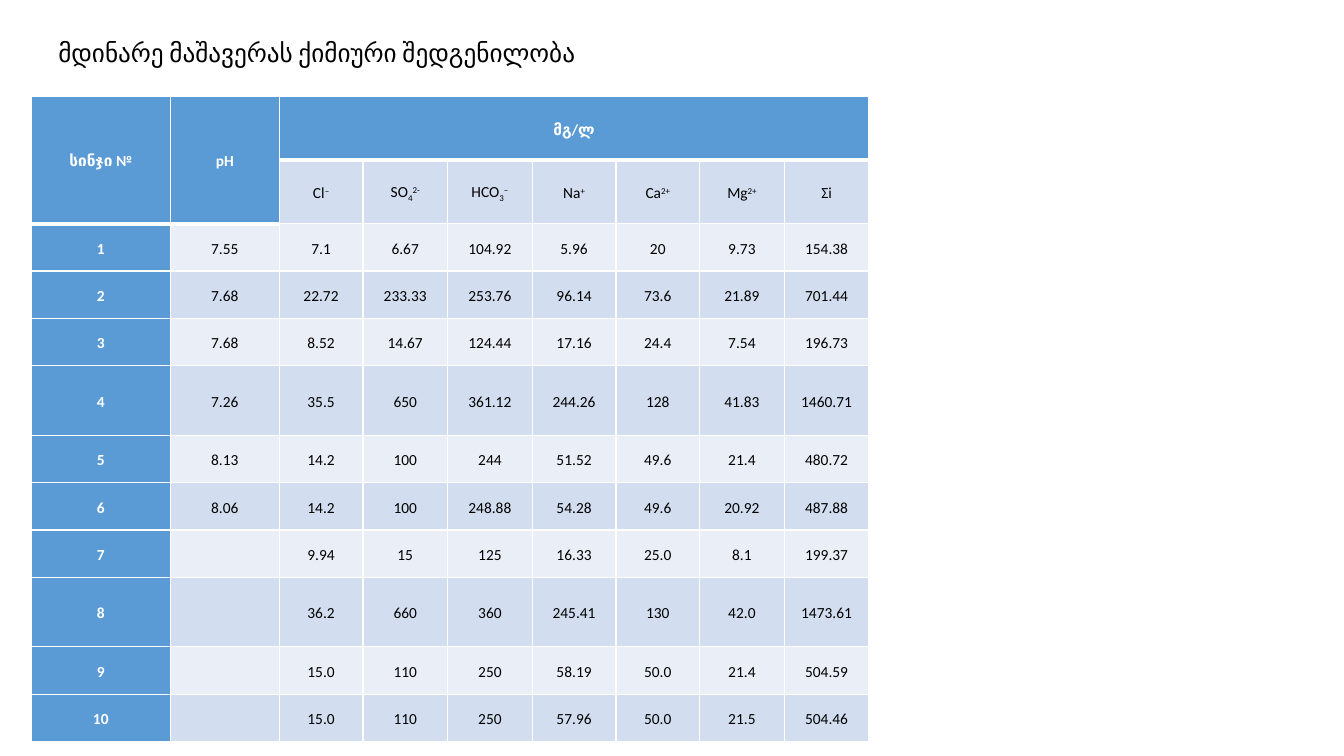
"""Build the slide on the chemical composition of the Mashavera river."""
from lxml.etree import SubElement
from pptx import Presentation
from pptx.dml.color import RGBColor
from pptx.enum.text import MSO_ANCHOR as Anchor, PP_ALIGN as Align
from pptx.oxml.ns import qn
from pptx.util import Inches, Pt

TITLE = "მდინარე მაშავერას ქიმიური შედგენილობა"
SAMPLE, ACIDITY, UNIT = "სინჯი №", "pH", "მგ/ლ"
SUB, SUPER = -25000, 30000
IONS = [
    [("Cl", 0), ("–", SUPER)],
    [("SO", 0), ("4", SUB), ("2-", SUPER)],
    [("HCO", 0), ("3", SUB), ("–", SUPER)],
    [("Na", 0), ("+", SUPER)],
    [("Ca", 0), ("2+", SUPER)],
    [("Mg", 0), ("2+", SUPER)],
    [("Σi", 0)],
]
SAMPLES = [
    ("1", "7.55", "7.1", "6.67", "104.92", "5.96", "20", "9.73", "154.38"),
    ("2", "7.68", "22.72", "233.33", "253.76", "96.14", "73.6", "21.89", "701.44"),
    ("3", "7.68", "8.52", "14.67", "124.44", "17.16", "24.4", "7.54", "196.73"),
    ("4", "7.26", "35.5", "650", "361.12", "244.26", "128", "41.83", "1460.71"),
    ("5", "8.13", "14.2", "100", "244", "51.52", "49.6", "21.4", "480.72"),
    ("6", "8.06", "14.2", "100", "248.88", "54.28", "49.6", "20.92", "487.88"),
    ("7", "", "9.94", "15", "125", "16.33", "25.0", "8.1", "199.37"),
    ("8", "", "36.2", "660", "360", "245.41", "130", "42.0", "1473.61"),
    ("9", "", "15.0", "110", "250", "58.19", "50.0", "21.4", "504.59"),
    ("10", "", "15.0", "110", "250", "57.96", "50.0", "21.5", "504.46"),
]
WIDTHS = [1.38, 1.08, 0.83, 0.84, 0.84, 0.83, 0.83, 0.84, 0.84]
HEADER_HEIGHT, ROW_HEIGHT, TALL_HEIGHT = 0.63, 0.47, 0.69
TALL_SAMPLES = ("4", "8")
FONT = "Calibri"
BLUE, BAND_DARK, BAND_LIGHT = "5B9BD5", "D2DEEF", "EAEFF7"
WHITE, BLACK = "FFFFFF", "000000"


def color(value):
    return RGBColor.from_string(value)


def style_font(font, size, ink, bold=False):
    font.name, font.size, font.bold = FONT, Pt(size), bold
    font.color.rgb = color(ink)


def add_title(slide):
    box = slide.shapes.add_textbox(Inches(0.48), Inches(0.24), Inches(5.8), Inches(0.59))
    frame = box.text_frame
    frame.word_wrap = True
    frame.vertical_anchor = Anchor.MIDDLE
    line = frame.paragraphs[0]
    line.text, line.line_spacing = TITLE, 0.9
    style_font(line.font, 18, BLACK)


def add_borders(cell, top, bottom):
    properties = cell._tc.get_or_add_tcPr()
    sides = [("lnL", 1), ("lnR", 1), ("lnT", top), ("lnB", bottom)]
    for position, (side, width) in enumerate(sides):
        edge = SubElement(properties, qn("a:" + side), w=str(Pt(width)))
        fill = SubElement(edge, qn("a:solidFill"))
        SubElement(fill, qn("a:srgbClr"), val=WHITE)
        properties.insert(position, edge)


def fill_cell(cell, row, column, runs):
    heading = row == 0 or column == 0 or (row == 1 and column == 1)
    band = BAND_LIGHT if row and row % 2 == 0 else BAND_DARK
    cell.fill.solid()
    cell.fill.fore_color.rgb = color(BLUE if heading else band)
    cell.vertical_anchor = Anchor.MIDDLE
    cell.margin_left = cell.margin_right = Inches(0.07)
    cell.margin_top = cell.margin_bottom = 0
    line = cell.text_frame.paragraphs[0]
    line.alignment, line.line_spacing, line.space_after = Align.CENTER, 1.15, Pt(10)
    style_font(line.font, 11, WHITE if heading else BLACK, heading)
    for text, baseline in runs:
        run = line.add_run()
        run.text = text
        if baseline:
            run.font._element.set("baseline", str(baseline))
    header_end = 1 if column < 2 else 0
    add_borders(cell, 3 if row == header_end + 1 else 1, 3 if row <= header_end else 1)


def add_composition(slide):
    plain_rows = [(SAMPLE, ACIDITY, UNIT) + ("",) * (len(IONS) - 1)] + SAMPLES
    rows = [[[(text, 0)] if text else [] for text in row] for row in plain_rows]
    rows.insert(1, [[], []] + IONS)
    heights = [HEADER_HEIGHT] * 2 + [
        TALL_HEIGHT if sample[0] in TALL_SAMPLES else ROW_HEIGHT for sample in SAMPLES
    ]
    frame = slide.shapes.add_table(
        len(rows), len(WIDTHS), Inches(0.31), Inches(0.96),
        Inches(sum(WIDTHS)), Inches(sum(heights)),
    )
    table = frame.table
    for column, width in zip(table.columns, WIDTHS):
        column.width = Inches(width)
    for row, height in zip(table.rows, heights):
        row.height = Inches(height)
    for r, row in enumerate(rows):
        for c, runs in enumerate(row):
            fill_cell(table.cell(r, c), r, c, runs)
    for start, end in [((0, 0), (1, 0)), ((0, 1), (1, 1)), ((0, 2), (0, 8))]:
        table.cell(*start).merge(table.cell(*end))


def main():
    deck = Presentation()
    deck.slide_width, deck.slide_height = Inches(13.33), Inches(7.5)
    slide = deck.slides.add_slide(deck.slide_layouts[6])
    add_title(slide)
    add_composition(slide)
    deck.save("out.pptx")


if __name__ == "__main__":
    main()
